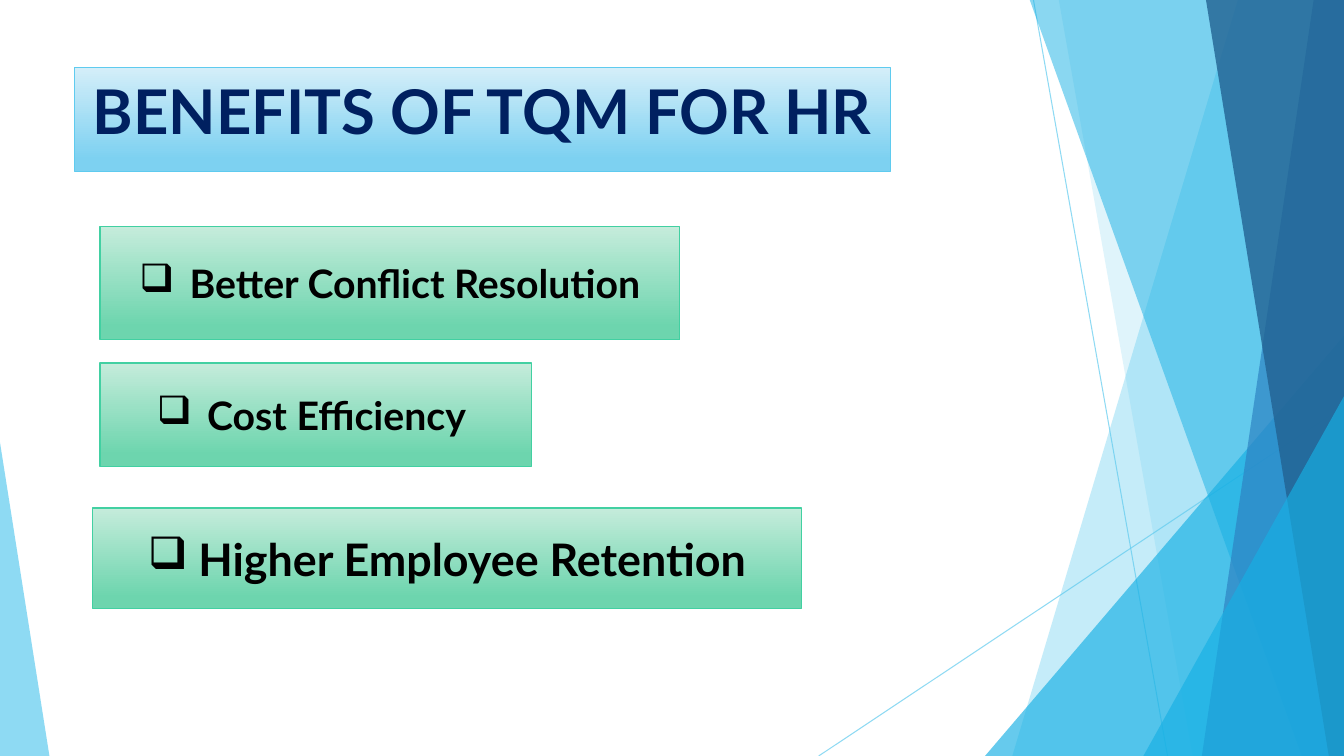
"""Build the slide on the benefits of TQM for HR."""
from lxml import etree
from pptx import Presentation
from pptx.dml.color import RGBColor
from pptx.enum import shapes, text
from pptx.oxml import ns
from pptx.util import Inches, Pt


def tint(color, code, alpha=100):
    color.rgb = RGBColor.from_string(code)
    if alpha < 100:
        node = color._xFill.find(ns.qn("a:srgbClr"))
        etree.SubElement(node, ns.qn("a:alpha"), val=str(alpha * 1000))


def panel(box, area, words, size, ink, stops, edge):
    box.left, box.top, box.width, box.height = map(Inches, area)
    box.fill.gradient()
    box.fill.gradient_angle = 270
    for stop, code, place in zip(box.fill.gradient_stops, stops, (0, 0.88)):
        tint(stop.color, code)
        stop.position = place
    tint(box.line.color, edge)
    box.line.width = Pt(1)
    frame = box.text_frame
    frame.text = words
    frame.word_wrap = True
    frame.auto_size = text.MSO_AUTO_SIZE.NONE
    para = frame.paragraphs[0]
    para.alignment = text.PP_ALIGN.CENTER
    font = para.runs[0].font
    font.name, font.size, font.bold = "Lato", Pt(size), True
    tint(font.color, ink)
    return para


deck = Presentation()
deck.slide_width, deck.slide_height = Inches(13.33), Inches(7.5)
slide = deck.slides.add_slide(deck.slide_layouts[5])
draw = slide.shapes

for ends in [(10.25, 0, 11.58, 7.5), (13.33, 4.03, 8.12, 7.5)]:
    line = draw.add_connector(shapes.MSO_CONNECTOR.STRAIGHT, *map(Inches, ends))
    tint(line.line.color, "5FCBEF", 70)
    line.line.width = Pt(0.75)
    etree.SubElement(line._element.spPr, ns.qn("a:effectLst"))

# Bands give top and bottom x; triangles give left, top, width and apex.
decor = [
    ((12.28, 10.04), "5FCBEF", 36),
    ((10.5, 11.83), "5FCBEF", 20),
    ((9.77, 3.33, 3.56, 1), "17B0E4", 66),
    ((10.21, 12.91), "17B0E4", 50),
    ((13.03, 11.92), "2E83C3", 70),
    ((11.96, 13.18), "226292", 80),
    ((11.34, 3.93, 1.99, 1), "17B0E4", 66),
    ((0, 4.39, 0.49, 0), "5FCBEF", 70),
]
for form, code, alpha in decor:
    if len(form) == 2:
        high, low = map(Inches, form)
        right, top, base = Inches(13.33), Inches(-0.01), Inches(7.5)
        pen = draw.build_freeform(high, top)
        pen.add_line_segments([(right, top), (right, base), (low, base)])
        part = pen.convert_to_shape()
    else:
        left, top, width, apex = form
        area = map(Inches, (left, top, width, 7.5 - top))
        part = draw.add_shape(shapes.MSO_SHAPE.ISOSCELES_TRIANGLE, *area)
        part.adjustments[0] = apex
    part.shadow.inherit = False
    part.fill.solid()
    tint(part.fill.fore_color, code, alpha)
    part.line.fill.background()

panel(draw.title, (0.74, 0.67, 8.09, 1.03), "BENEFITS OF TQM FOR HR", 44,
      "002060", ("D4EEF9", "7DD1F1"), "5FCBEF")
draw.title.text_frame.vertical_anchor = text.MSO_ANCHOR.TOP

gains = [
    ((0.99, 2.25, 5.75, 1.12), "Better Conflict Resolution", 28),
    ((0.99, 3.6, 4.28, 1.03), "Cost Efficiency ", 28),
    ((0.92, 5.04, 7.03, 1), "Higher Employee Retention", 32),
]
for area, words, size in gains:
    box = draw.add_shape(shapes.MSO_SHAPE.RECTANGLE, *map(Inches, area))
    box.shadow.inherit = False
    para = panel(box, area, words, size, "000000", ("C5ECDB", "6DD5AE"), "42D0A2")
    box.text_frame.vertical_anchor = text.MSO_ANCHOR.MIDDLE
    props = para._p.get_or_add_pPr()
    props.set("marL", str(Inches(0.5)))
    props.set("indent", str(Inches(-0.5)))
    etree.SubElement(props, ns.qn("a:buChar"), char="❑")

deck.save("out.pptx")
